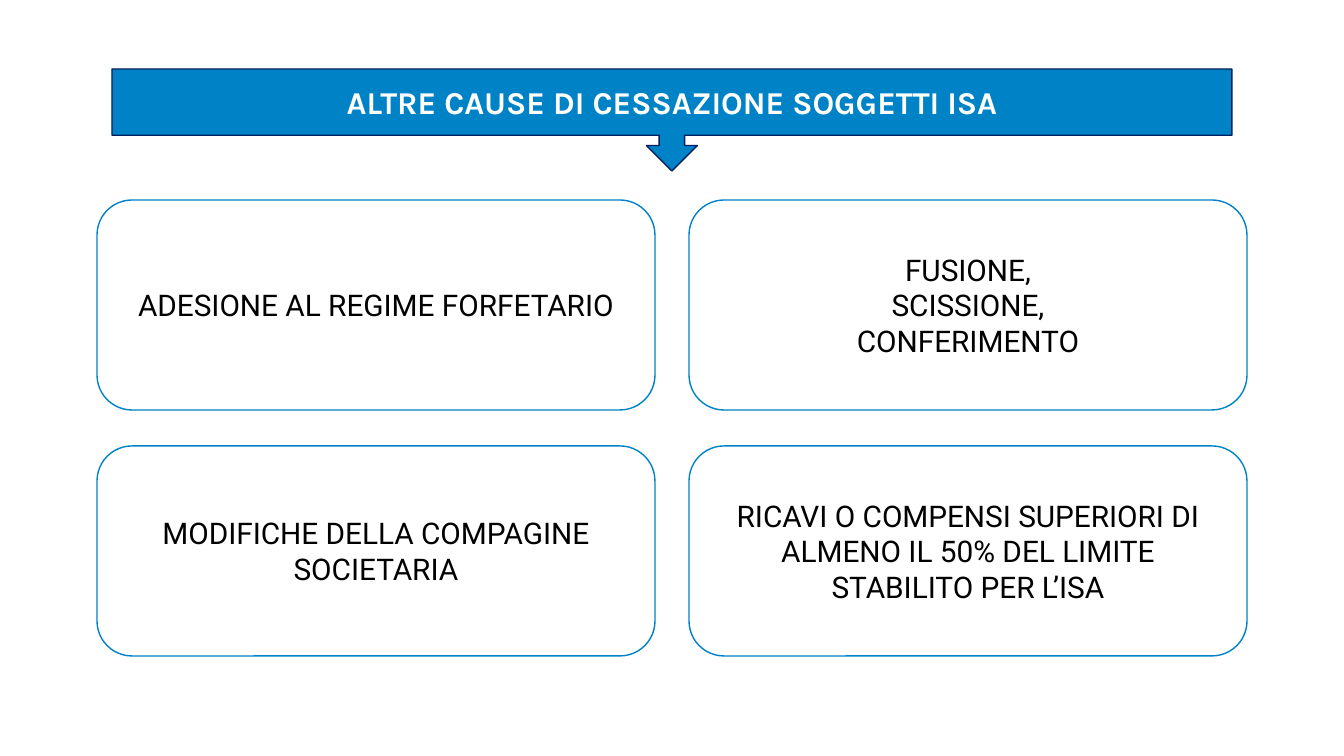
"""Build the slide on other causes of cessation for ISA taxpayers."""
import pptx
import pptx.dml.color
import pptx.enum.shapes
import pptx.enum.text
import pptx.util

PX = 914400 / 100.8
COLORS = {"blue": "0082C6", "navy": "002060", "white": "FFFFFF", "black": "000000"}
SHAPES = pptx.enum.shapes.MSO_SHAPE


def rgb(name):
    return pptx.dml.color.RGBColor.from_string(COLORS[name])


def add_box(slide, kind, box, fill, line, lines, font, size, color, bold=False):
    sp = slide.shapes.add_shape(kind, *[round(v * PX) for v in box])
    sp.shadow.inherit = False
    sp.fill.solid()
    sp.fill.fore_color.rgb = rgb(fill)
    sp.line.color.rgb = rgb(line)
    sp.line.width = pptx.util.Pt(1)
    tf = sp.text_frame
    tf.word_wrap = True
    tf.vertical_anchor = pptx.enum.text.MSO_ANCHOR.MIDDLE
    tf.text = "\n".join(lines)
    for p in tf.paragraphs:
        p.alignment = pptx.enum.text.PP_ALIGN.CENTER
        p.font.name = font
        p.font.size = pptx.util.Pt(size)
        p.font.bold = bold
        p.font.color.rgb = rgb(color)


prs = pptx.Presentation()
prs.slide_width = round(1344 * PX)
prs.slide_height = round(756 * PX)
s = prs.slides.add_slide(prs.slide_layouts[6])

causes = [
    ["ADESIONE AL REGIME FORFETARIO"],
    ["FUSIONE,", "SCISSIONE,", "CONFERIMENTO"],
    ["MODIFICHE DELLA COMPAGINE SOCIETARIA"],
    ["RICAVI O COMPENSI SUPERIORI DI ALMENO IL 50% DEL LIMITE STABILITO PER L’ISA"],
]
for i, lines in enumerate(causes):
    row, col = divmod(i, 2)
    box = (97 + 592 * col, 200 + 246 * row, 558, 210)
    add_box(s, SHAPES.ROUNDED_RECTANGLE, box, "white", "blue", lines, "Roboto", 21.3, "black")

add_box(s, SHAPES.DOWN_ARROW_CALLOUT, (112, 69, 1120, 102), "blue", "navy",
        ["ALTRE CAUSE DI CESSAZIONE SOGGETTI ISA"], "Karla", 22.7, "white", bold=True)

prs.save("out.pptx")
